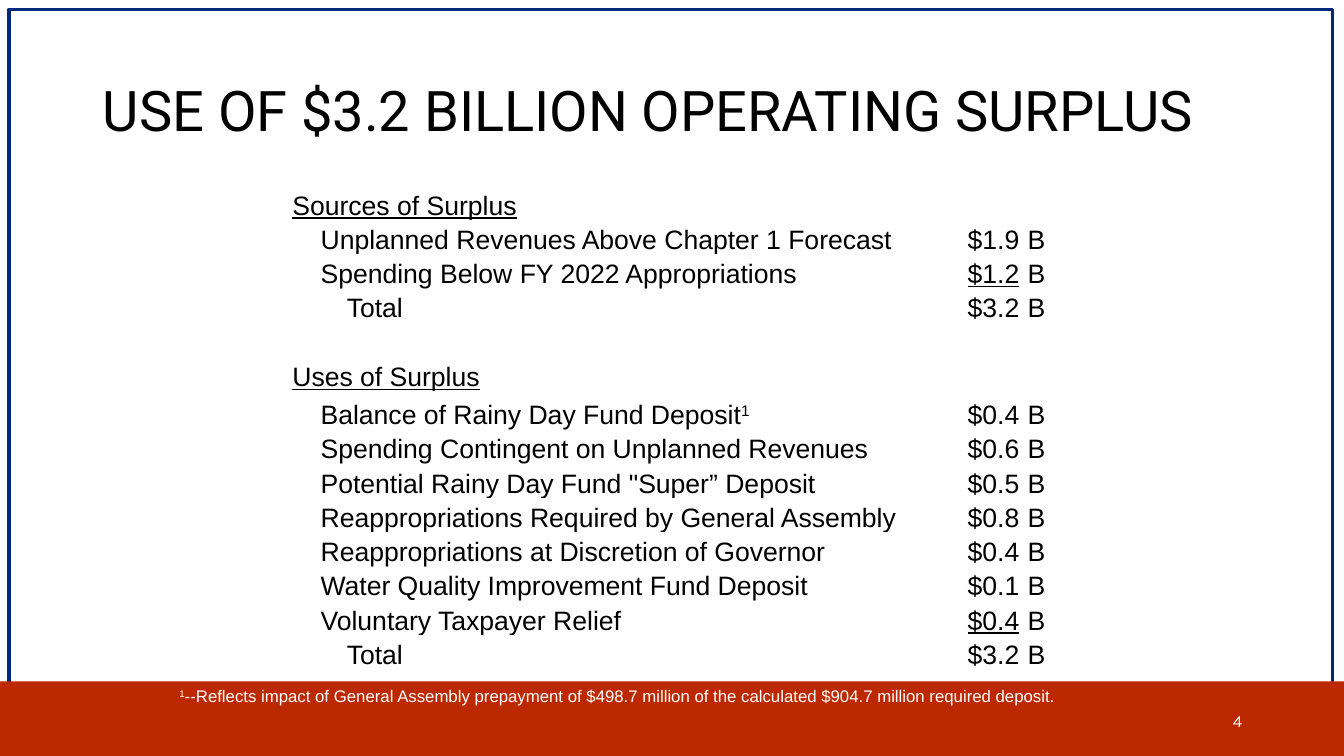
from pptx import Presentation
from pptx.dml.color import RGBColor
from pptx.enum.shapes import MSO_SHAPE
from pptx.enum.text import MSO_ANCHOR, PP_ALIGN
from pptx.util import Inches, Pt

RECT = MSO_SHAPE.RECTANGLE
MID, BASE = MSO_ANCHOR.MIDDLE, MSO_ANCHOR.BOTTOM
LEFT, MID_X, RIGHT = PP_ALIGN.LEFT, PP_ALIGN.CENTER, PP_ALIGN.RIGHT
COLORS = {"navy": "00297B", "rust": "BC2800", "ink": "000000", "white": "FFFFFF"}
COLS = (0.28, 6.01, 0.94, 0.32)
ROW, TALL = 0.34, 0.38
SOURCES = [
    ("Unplanned Revenues Above Chapter 1 Forecast", "$1.9"),
    ("Spending Below FY 2022 Appropriations", "$1.2"),
    ("Total", "$3.2"),
]
USES = [
    ("Balance of Rainy Day Fund Deposit^1", "$0.4"),
    ("Spending Contingent on Unplanned Revenues", "$0.6"),
    ('Potential Rainy Day Fund "Super” Deposit', "$0.5"),
    ("Reappropriations Required by General Assembly", "$0.8"),
    ("Reappropriations at Discretion of Governor", "$0.4"),
    ("Water Quality Improvement Fund Deposit", "$0.1"),
    ("Voluntary Taxpayer Relief", "$0.4"),
    ("Total", "$3.2"),
]
GROUPS = [("Sources of Surplus", SOURCES), ("Uses of Surplus", USES)]
NOTE = ("^1--Reflects impact of General Assembly prepayment of $498.7 million "
        "of the calculated $904.7 million required deposit.")


def color(name):
    return RGBColor.from_string(COLORS[name])


def write(frame, text, size=19, font="Arial", ink="ink", align=LEFT, under=False, space=1.0):
    para = frame.paragraphs[0]
    para.alignment = align
    para.line_spacing = space
    head, mark, tail = text.partition("^")
    for part, raised in ((head, False), (tail[:1], True), (tail[1:], False)):
        if part:
            run = para.add_run()
            run.text = part
            run.font.size = Pt(size)
            run.font.name = font
            run.font.underline = under
            run.font.color.rgb = color(ink)
            if raised:
                run.font._element.set("baseline", "30000")


def add_rect(slide, box, fill=None, line=None):
    shape = slide.shapes.add_shape(RECT, *map(Inches, box))
    shape.shadow.inherit = False
    if fill:
        shape.fill.solid()
        shape.fill.fore_color.rgb = color(fill)
    else:
        shape.fill.background()
    if line:
        shape.line.color.rgb = color(line)
        shape.line.width = Pt(2.25)
    else:
        shape.line.fill.background()


def add_frame(slide, box):
    x, y, w, h = box
    band = 0.74
    add_rect(slide, (x + 0.09, y + 0.09, w - 0.2, h - 0.49), line="navy")
    add_rect(slide, (x, y + h - band, w, band), fill="rust")


def add_title(slide, box, text):
    title = slide.shapes.title
    title.left, title.top, title.width, title.height = map(Inches, box)
    title.text_frame.vertical_anchor = MID
    write(title.text_frame, text, size=40, font="Roboto", space=0.9)


def add_text(slide, box, text, **style):
    frame = slide.shapes.add_textbox(*map(Inches, box)).text_frame
    frame.word_wrap = True
    frame.vertical_anchor = MID
    write(frame, text, **style)


def fill_group(table, top, head, items):
    table.cell(top, 0).merge(table.cell(top, 1))
    write(table.cell(top, 0).text_frame, head, under=True)
    for row, (label, value) in enumerate(items, top + 1):
        name, sum_, unit = (table.cell(row, col) for col in (1, 2, 3))
        if label == "Total":
            name.margin_left = Inches(0.27)
        if "^" in label:
            table.rows[row].height = Inches(TALL)
        write(name.text_frame, label)
        write(sum_.text_frame, value, align=RIGHT, under=row == top + len(items) - 1)
        write(unit.text_frame, "B", align=MID_X)


def add_budget(slide, box):
    count = sum(len(items) + 1 for _, items in GROUPS) + len(GROUPS) - 1
    table = slide.shapes.add_table(count, len(COLS), *map(Inches, box)).table
    table.first_row = table.horz_banding = False
    for col, width in zip(table.columns, COLS):
        col.width = Inches(width)
    for row in table.rows:
        row.height = Inches(ROW)
        for cell in row.cells:
            cell.fill.background()
            cell.vertical_anchor = BASE
            cell.margin_left = cell.margin_right = cell.margin_top = Inches(0.01)
            cell.margin_bottom = 0
    top = 0
    for head, items in GROUPS:
        fill_group(table, top, head, items)
        top += len(items) + 2


def main():
    deck = Presentation()
    deck.slide_width, deck.slide_height = Inches(13.33), Inches(7.5)
    slide = deck.slides.add_slide(deck.slide_layouts[5])
    add_frame(slide, (0, 0, 13.33, 7.5))
    add_title(slide, (0.92, 0.4, 11.5, 1.45), "USE OF $3.2 BILLION OPERATING SURPLUS")
    add_text(slide, (9.42, 6.95, 3, 0.4), "4", size=12, font="Karla", ink="white", align=RIGHT)
    add_budget(slide, (2.89, 1.85, 7.55, 4.8))
    add_text(slide, (1.68, 6.7, 9.08, 0.4), NOTE, size=12, ink="white")
    deck.save("out.pptx")


if __name__ == "__main__":
    main()
